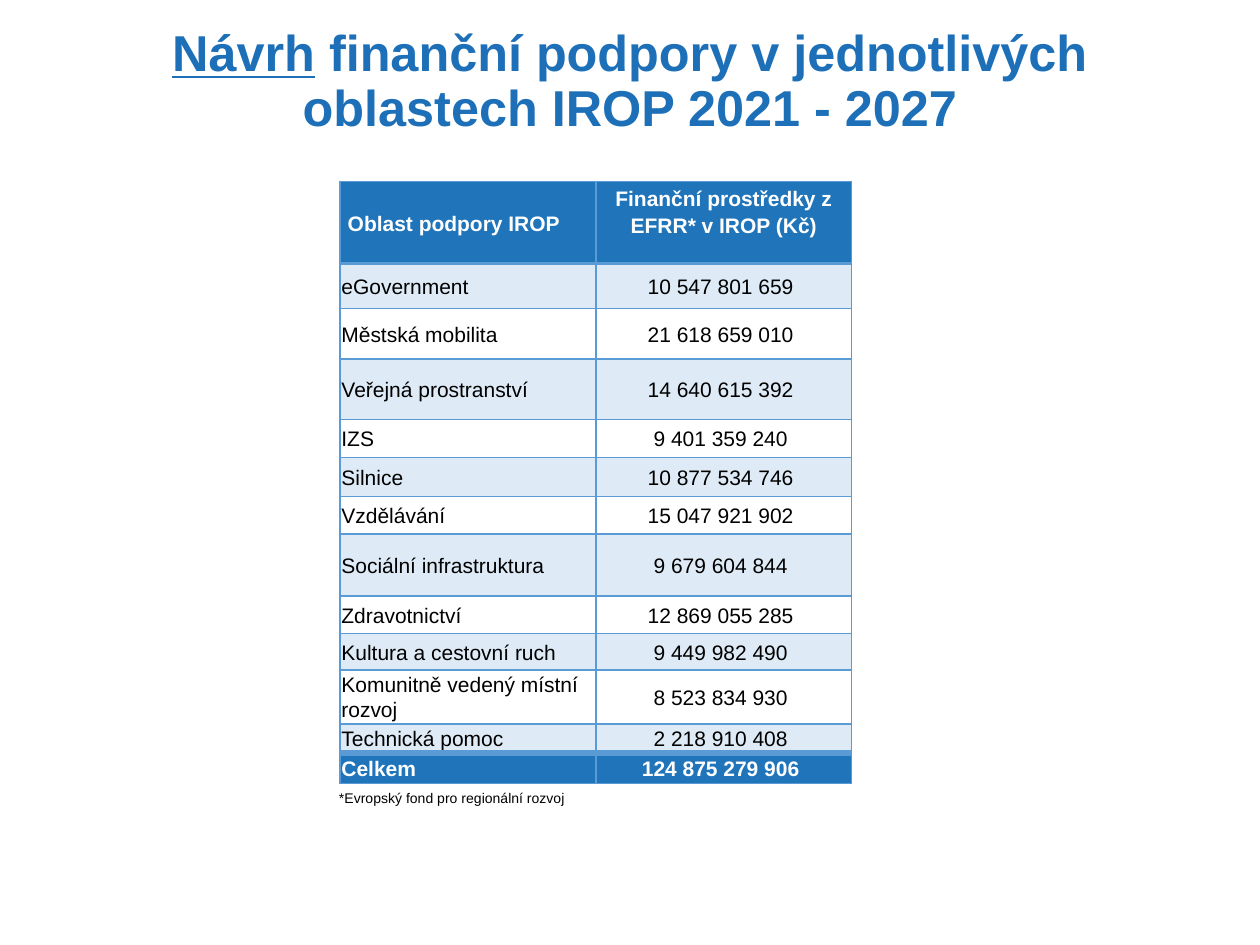
from lxml.etree import SubElement
from pptx import Presentation
from pptx.dml.color import RGBColor
from pptx.enum.text import MSO_ANCHOR, PP_ALIGN
from pptx.oxml.ns import qn
from pptx.util import Inches, Pt

COLORS = {
    "title": "1D70B8",
    "header": "2074BA",
    "line": "5B9BD5",
    "light": "FFFFFF",
    "dark": "000000",
}
HEADINGS = ("Oblast podpory IROP", "Finanční prostředky z EFRR* v IROP (Kč)", 0.63)
AREAS = [
    ("eGovernment", "10 547 801 659", 0.36),
    ("Městská mobilita", "21 618 659 010", 0.4),
    ("Veřejná prostranství", "14 640 615 392", 0.48),
    ("IZS", "9 401 359 240", 0.3),
    ("Silnice", "10 877 534 746", 0.31),
    ("Vzdělávání", "15 047 921 902", 0.3),
    ("Sociální infrastruktura", "9 679 604 844", 0.49),
    ("Zdravotnictví", "12 869 055 285", 0.3),
    ("Kultura a cestovní ruch", "9 449 982 490", 0.29),
    ("Komunitně vedený místní rozvoj", "8 523 834 930", 0.41),
    ("Technická pomoc", "2 218 910 408", 0.23),
]
TOTAL = ("Celkem", "124 875 279 906", 0.24)


def apply_format(target, values):
    for name, value in values.items():
        setattr(target, name, value)


def add_span(para, text, color, size, **font_values):
    span = para.add_run()
    span.text = text
    apply_format(span.font, {"name": "Arial", "size": Pt(size), **font_values})
    span.font.color.rgb = RGBColor.from_string(COLORS[color])


def add_text_box(page, box, **frame_values):
    frame = page.shapes.add_textbox(*map(Inches, box)).text_frame
    apply_format(frame, {"word_wrap": True, **frame_values})
    return frame.paragraphs[0]


def add_title(page, box):
    para = add_text_box(page, box, vertical_anchor=MSO_ANCHOR.MIDDLE)
    apply_format(para, {"alignment": PP_ALIGN.CENTER, "line_spacing": 0.9})
    add_span(para, "Návrh", "title", 28.8, bold=True, underline=True)
    add_span(para, " finanční podpory v jednotlivých oblastech IROP 2021 - 2027",
             "title", 28.8, bold=True)


def add_footnote(page, box, indent):
    para = add_text_box(page, box, margin_left=Inches(indent))
    add_span(para, "*Evropský fond pro regionální rozvoj", "dark", 8)


def set_borders(cell, top, bottom):
    properties = cell._tc.get_or_add_tcPr()
    for side, width in (("L", 1), ("R", 1), ("T", top), ("B", bottom)):
        line = SubElement(properties, qn(f"a:ln{side}"), w=str(Pt(width)))
        fill = SubElement(line, qn("a:solidFill"))
        SubElement(fill, qn("a:srgbClr"), val=COLORS["line"])


def set_fill(cell, strong, banded):
    if not (strong or banded):
        cell.fill.background()
        return
    cell.fill.solid()
    cell.fill.fore_color.rgb = RGBColor.from_string(COLORS["header" if strong else "line"])
    if banded:
        color = cell._tc.tcPr.find(qn("a:solidFill"))[0]
        SubElement(color, qn("a:alpha"), val="20000")


def add_funding_table(page, box):
    rows = [HEADINGS, *AREAS, TOTAL]
    last = len(rows) - 1
    table = page.shapes.add_table(len(rows), 2, *map(Inches, box)).table
    apply_format(table, {"first_row": False, "horz_banding": False})
    for column in table.columns:
        column.width = Inches(box[2] / 2)
    edges = {1: 2, last: 4}
    for index, (area, amount, height) in enumerate(rows):
        table.rows[index].height = Inches(height)
        header = index == 0
        strong = index in (0, last)
        for position, text in enumerate((area, amount)):
            cell = table.cell(index, position)
            apply_format(cell, {
                "vertical_anchor": MSO_ANCHOR.MIDDLE,
                "margin_left": Inches(0.06 if header and not position else 0.01),
                "margin_right": Inches(0.06 if position and not header else 0.01),
                "margin_top": 0,
                "margin_bottom": Inches(0.19 if header and position else 0),
            })
            set_borders(cell, edges.get(index, 1), edges.get(index + 1, 1))
            set_fill(cell, strong, index % 2 == 1)
            para = cell.text_frame.paragraphs[0]
            apply_format(para, {
                "alignment": PP_ALIGN.CENTER if position else PP_ALIGN.LEFT,
                "line_spacing": 1.15 if header else 1.07,
            })
            add_span(para, text, "light" if strong else "dark", 12, bold=strong)


def main():
    deck = Presentation()
    apply_format(deck, {"slide_width": Inches(10), "slide_height": Inches(7.5)})
    page = deck.slides.add_slide(deck.slide_layouts[6])
    add_title(page, (0.69, 0.19, 8.62, 0.93))
    add_funding_table(page, (2.7, 1.44, 4.06, 4.74))
    add_footnote(page, (0.84, 6.22, 8.62, 0.24), 1.85)
    deck.save("out.pptx")


if __name__ == "__main__":
    main()
